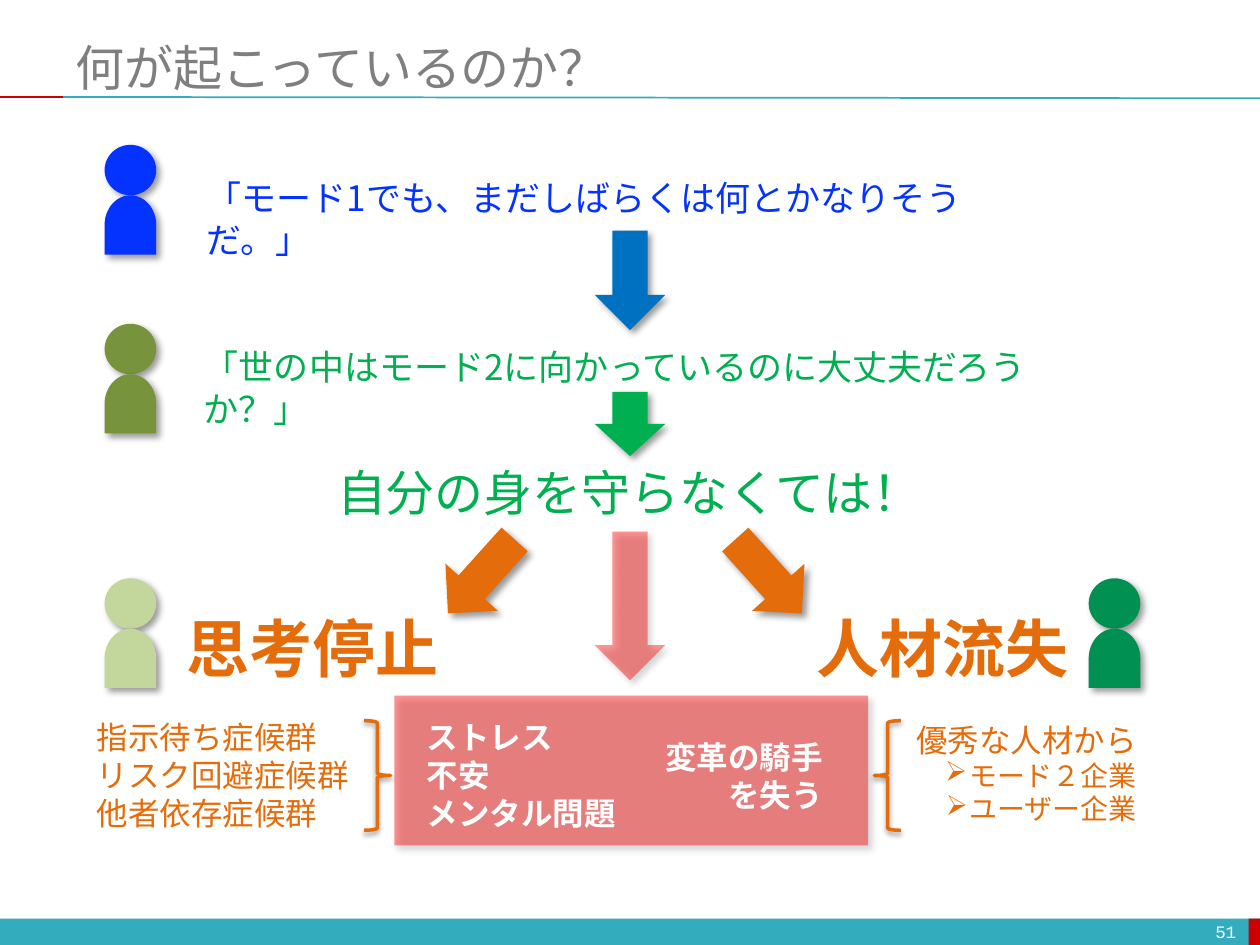
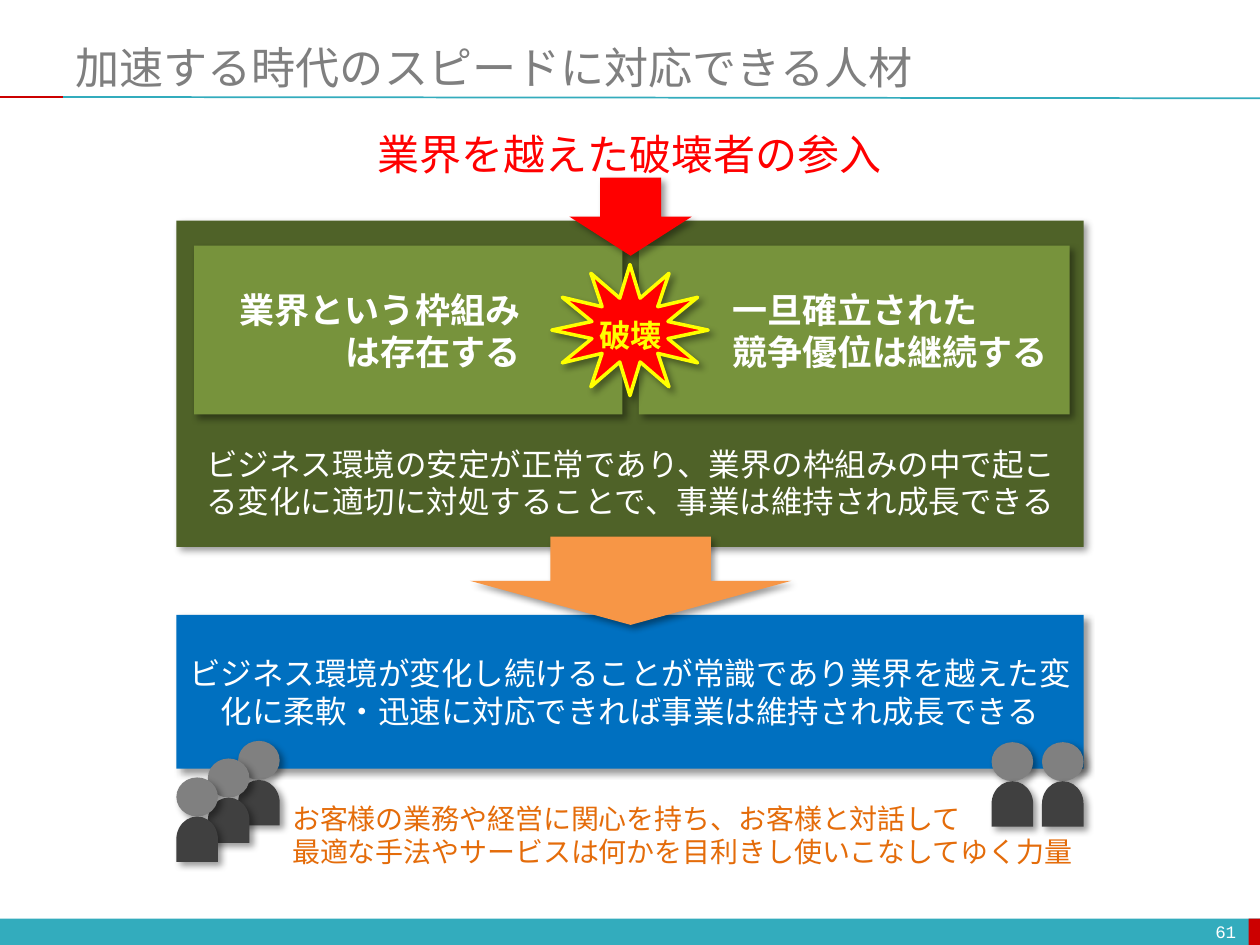
from dataclasses import dataclass

from lxml.etree import SubElement
from pptx import Presentation
from pptx.dml.color import RGBColor
from pptx.enum.shapes import MSO_CONNECTOR, MSO_SHAPE
from pptx.enum.text import MSO_ANCHOR, PP_ALIGN
from pptx.oxml.ns import qn
from pptx.util import Inches, Pt


@dataclass(frozen=True)
class Theme:
    teal: str = "33ACBD"
    crimson: str = "CC0000"
    title_gray: str = "7F7F7F"
    white: str = "FFFFFF"
    blue: str = "0432FF"
    deep_blue: str = "0070C0"
    green: str = "00B050"
    sea_green: str = "009051"
    dark_olive: str = "4F6228"
    olive: str = "77933C"
    pale_olive: str = "C3D69B"
    orange: str = "E46C0A"
    light_orange: str = "F79646"
    red: str = "FF0000"
    yellow: str = "FFFF00"
    head_gray: str = "808080"
    body_gray: str = "404040"
    body_font: str = "Noto Sans CJK JP"
    title_font: str = "Calibri"
    number_font: str = "Courier New"
    number_size: float = 10
    small: float = 16
    body: float = 18
    speech: float = 20
    heading: float = 24
    claim: float = 28
    long_title: float = 25.2
    outcome: float = 36
    line_height: float = 1.2


theme = Theme()
# Opacity in percent, blur and distance in points, direction in degrees
SOFT_SHADOW = (40, 4, 3, 45)
BRACE_SHADOW = (38, 3.1, 1.6, 90)
LEFT, CENTER, RIGHT = PP_ALIGN.LEFT, PP_ALIGN.CENTER, PP_ALIGN.RIGHT


def add_shape(slide, kind, box, fill=None, line=None, shadow=SOFT_SHADOW, rotation=0, opacity=None):
    """Add a preset shape; box is left, top, width, height in inches, opacity a percentage."""
    shape = slide.shapes.add_shape(kind, *map(Inches, box))
    shape.rotation = rotation
    if fill:
        shape.fill.solid()
        shape.fill.fore_color.rgb = RGBColor.from_string(fill)
    else:
        shape.fill.background()
    if line:
        shape.line.color.rgb = RGBColor.from_string(line)
        shape.line.width = Pt(2)
    else:
        shape.line.fill.background()
    shape.shadow.inherit = False
    properties = shape.element.spPr
    if opacity:
        color = properties.find(f"{qn('a:solidFill')}/{qn('a:srgbClr')}")
        SubElement(color, qn("a:alpha"), val=str(opacity * 1000))
    if shadow:
        alpha, blur, distance, direction = shadow
        outer = SubElement(
            properties.find(qn("a:effectLst")), qn("a:outerShdw"),
            blurRad=str(Pt(blur)), dist=str(Pt(distance)), dir=str(direction * 60000),
            algn="tl", rotWithShape="0")
        color = SubElement(outer, qn("a:srgbClr"), val="000000")
        SubElement(color, qn("a:alpha"), val=str(alpha * 1000))
    return shape


def add_text(target, text, box=None, size=theme.body, color=theme.white, font=theme.body_font,
             bold=False, align=LEFT, anchor=MSO_ANCHOR.TOP, wrap=False, bullets=(),
             margin_left=0.1, margin_right=0.1):
    """Write into a new text box on a slide, or into a shape when no box is given."""
    shape = target.shapes.add_textbox(*map(Inches, box)) if box else target
    frame = shape.text_frame
    frame.word_wrap = wrap
    frame.vertical_anchor = anchor
    frame.margin_left, frame.margin_right = Inches(margin_left), Inches(margin_right)
    lines = text.split("\n")
    for index, content in enumerate([*lines, *bullets]):
        paragraph = frame.paragraphs[0] if index == 0 else frame.add_paragraph()
        paragraph.alignment = align
        is_bullet = index >= len(lines)
        points = theme.small if is_bullet else size
        paragraph.line_spacing = Pt(points * theme.line_height)
        if is_bullet:
            properties = paragraph._p.get_or_add_pPr()
            properties.set("marL", str(Inches(0.19)))
            properties.set("indent", str(Inches(-0.19)))
            SubElement(properties, qn("a:buChar"), char="➢")
        run = paragraph.add_run()
        run.text = content
        run.font.size = Pt(points)
        run.font.bold = bold
        run.font.color.rgb = RGBColor.from_string(color)
        run.font.name = font
        SubElement(run._r.get_or_add_rPr(), qn("a:ea"), typeface=font)


presentation = Presentation()
presentation.slide_width, presentation.slide_height = Inches(10), Inches(7.5)

# Title, rules and footer
slides = []
for title, title_size, number in (
    ("何が起こっているのか？", theme.claim, "51"),
    ("加速する時代のスピードに対応できる人材", theme.long_title, "61"),
):
    slide = presentation.slides.add_slide(presentation.slide_layouts[6])
    slides.append(slide)
    add_shape(slide, MSO_SHAPE.RECTANGLE, (0, 7.29, 10, 0.22), theme.teal, shadow=None)
    add_shape(slide, MSO_SHAPE.RECTANGLE, (9.91, 7.29, 0.1, 0.22), theme.crimson, shadow=None)
    for start, end, end_top, color in ((0.5, 10, 0.78, theme.teal), (0, 0.5, 0.77, theme.crimson)):
        rule = slide.shapes.add_connector(
            MSO_CONNECTOR.STRAIGHT, Inches(start), Inches(0.77), Inches(end), Inches(end_top))
        rule.line.color.rgb = RGBColor.from_string(color)
        rule.line.width = Pt(1)
        SubElement(rule.element.spPr, qn("a:effectLst"))
    add_text(slide, title, (0.5, 0.3, 9.5, 0.46), size=title_size, color=theme.title_gray,
             font=theme.title_font, anchor=MSO_ANCHOR.MIDDLE, wrap=True)
    add_text(slide, number, (7.58, 7.27, 2.33, 0.24), size=theme.number_size,
             font=theme.number_font, align=RIGHT, anchor=MSO_ANCHOR.MIDDLE, wrap=True)
worries, talent = slides

# Slide 1: worries and where they lead
add_text(worries, "「モード1でも、まだしばらくは何とかなりそうだ。」", (1.54, 1.35, 6.9, 0.44),
         size=theme.speech, color=theme.blue, wrap=True)
add_text(worries, "「世の中はモード2に向かっているのに大丈夫だろうか？」", (1.52, 2.69, 7.5, 0.44),
         size=theme.speech, color=theme.green, wrap=True)
add_text(worries, "自分の身を守らなくては！", (2.54, 3.62, 4.91, 0.57),
         size=theme.claim, color=theme.green, align=CENTER)

for left, top, height, color, rotation, opacity in (
    (4.72, 1.83, 0.79, theme.deep_blue, 0, None),
    (4.72, 3.11, 0.51, theme.green, 0, None),
    (5.82, 4.18, 0.79, theme.orange, 318, None),
    (3.54, 4.18, 0.79, theme.orange, 42, None),
    (4.72, 4.22, 1.18, theme.red, 0, 41),
):
    add_shape(worries, MSO_SHAPE.DOWN_ARROW, (left, top, 0.56, height), color,
              rotation=rotation, opacity=opacity)

for outcome, left, align in (("思考停止", 1.38, LEFT), ("人材流失", 6.36, RIGHT)):
    add_text(worries, outcome, (left, 4.79, 2.22, 0.71), size=theme.outcome,
             color=theme.orange, bold=True, align=align)
add_text(worries, "指示待ち症候群\nリスク回避症候群\n他者依存症候群", (0.67, 5.65, 2.22, 1.01),
         color=theme.orange)
add_text(worries, "優秀な人材から", (7.13, 5.67, 1.99, 0.94), color=theme.orange,
         align=RIGHT, wrap=True, bullets=("モード２企業", "ユーザー企業"))

for brace, left in ((MSO_SHAPE.RIGHT_BRACE, 2.89), (MSO_SHAPE.LEFT_BRACE, 6.94)):
    add_shape(worries, brace, (left, 5.72, 0.21, 0.87), line=theme.orange, shadow=BRACE_SHADOW)
add_shape(worries, MSO_SHAPE.RECTANGLE, (3.13, 5.52, 3.76, 1.19), theme.red, opacity=41)
add_text(worries, "ストレス\n不安\nメンタル問題", (3.29, 5.65, 1.72, 1.01), bold=True)
add_text(worries, "変革の騎手\nを失う", (5.17, 5.81, 1.46, 0.71), bold=True, align=RIGHT)

# Slide 2: old assumptions broken, new assumption below
add_shape(talent, MSO_SHAPE.RECTANGLE, (1.4, 1.75, 7.2, 2.59), theme.dark_olive)
for assumption, left, width, align, margins in (
    ("業界という枠組み\nは存在する", 1.54, 3.4, RIGHT, {"margin_right": 0.81}),
    ("一旦確立された\n競争優位は継続する", 5.07, 3.42, LEFT, {"margin_left": 0.74}),
):
    panel = add_shape(talent, MSO_SHAPE.RECTANGLE, (left, 1.95, width, 1.34), theme.olive)
    add_text(panel, assumption, size=theme.speech, bold=True, align=align,
             anchor=MSO_ANCHOR.MIDDLE, wrap=True, **margins)

burst = add_shape(talent, MSO_SHAPE.STAR_12_POINT, (4.38, 2.1, 1.24, 1.04), theme.red, theme.yellow)
burst.adjustments[0] = 0.252
add_text(talent, "破壊", (4.65, 2.46, 0.71, 0.4), color=theme.yellow, bold=True, align=CENTER)
add_text(talent, "業界を越えた破壊者の参入", (2.88, 0.97, 4.24, 0.5),
         size=theme.heading, color=theme.red, align=CENTER)

new_normal = add_shape(talent, MSO_SHAPE.RECTANGLE, (1.4, 4.88, 7.2, 1.22), theme.deep_blue)
add_text(new_normal,
         "ビジネス環境が変化し続けることが常識であり業界を越えた変化に柔軟・迅速に対応できれば事業は維持され成長できる",
         align=CENTER, anchor=MSO_ANCHOR.MIDDLE, wrap=True)
add_text(talent,
         "ビジネス環境の安定が正常であり、業界の枠組みの中で起こる変化に適切に対処することで、事業は維持され成長できる",
         (1.54, 3.48, 6.96, 0.71), wrap=True)
add_text(talent,
         "お客様の業務や経営に関心を持ち、お客様と対話して\n最適な手法やサービスは何かを目利きし使いこなしてゆく力量",
         (2.22, 6.31, 6.59, 0.64), size=theme.small, color=theme.orange, wrap=True)
add_shape(talent, MSO_SHAPE.DOWN_ARROW, (3.73, 4.26, 2.55, 0.7), theme.light_orange)
add_shape(talent, MSO_SHAPE.DOWN_ARROW, (4.52, 1.41, 0.97, 0.62), theme.red)

# People: a round head on a body turned upright
LARGE, SMALL = (0.41, 0.4, 0.47), (0.33, 0.31, 0.36)
people = [
    (worries, left, top, LARGE, color, color)
    for left, top, color in (
        (0.83, 1.15, theme.blue), (0.83, 2.57, theme.olive),
        (0.83, 4.59, theme.pale_olive), (8.64, 4.59, theme.sea_green))
] + [
    (talent, left, top, SMALL, theme.head_gray, theme.body_gray)
    for left, top in ((8.27, 5.89), (1.89, 5.88), (1.65, 6.02), (1.4, 6.17), (7.87, 5.89))
]
for slide, left, top, (width, head_height, body_height), head_color, body_color in people:
    add_shape(slide, MSO_SHAPE.OVAL, (left, top, width, head_height), head_color)
    turn_offset = (body_height - width) / 2
    body_box = (left - turn_offset, top + head_height + turn_offset, body_height, width)
    add_shape(slide, MSO_SHAPE.FLOWCHART_DELAY, body_box, body_color, rotation=270)

presentation.save("out.pptx")
